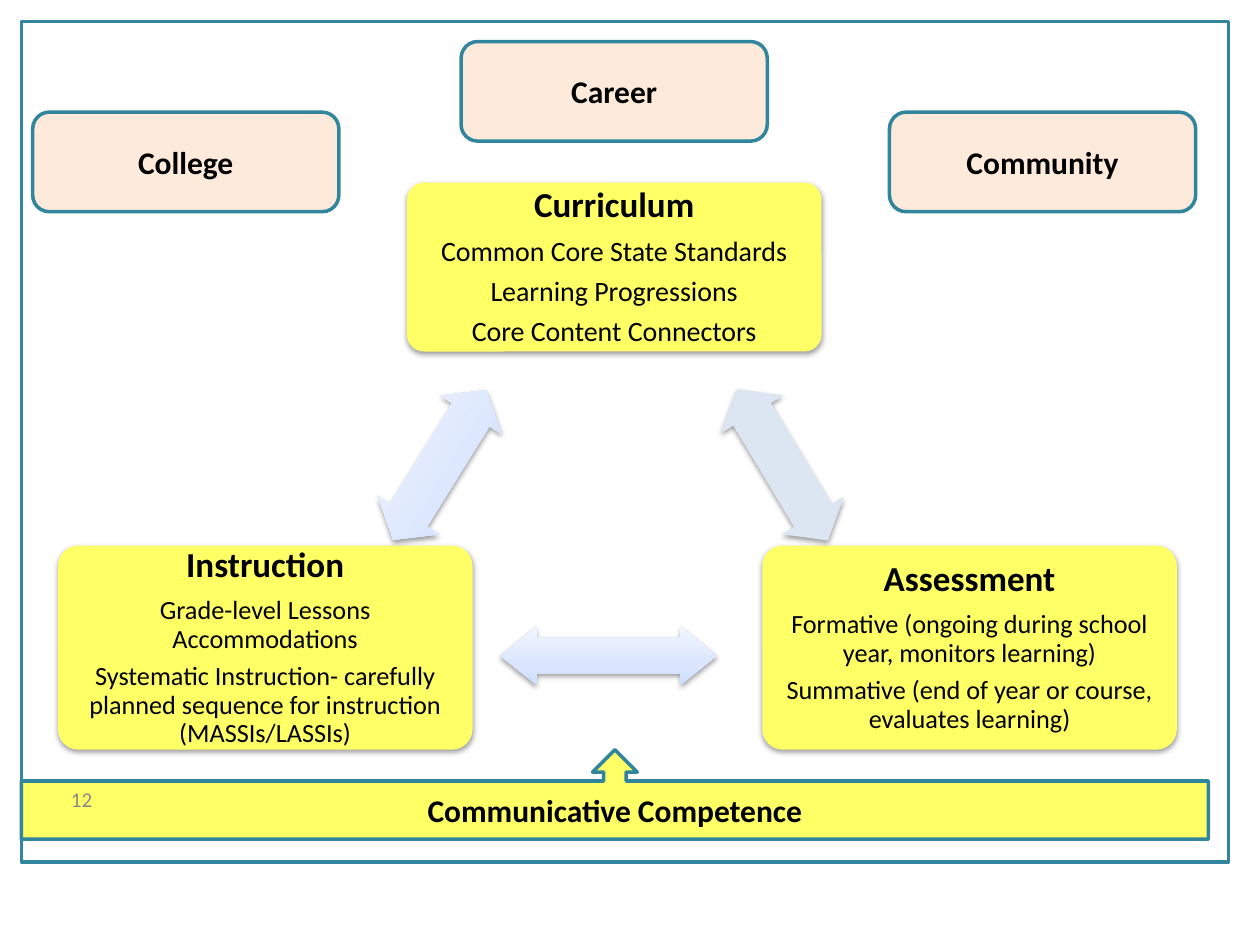
from copy import deepcopy

from lxml import etree
from pptx import Presentation
from pptx.dml.color import RGBColor
from pptx.enum import shapes, text
from pptx.oxml import ns
from pptx.util import Inches, Pt

KIND = shapes.MSO_SHAPE
ALIGN = text.PP_ALIGN
FONT = "Calibri"
COLORS = {
    "teal": "31859C", "peach": "FDEADA", "yellow": "FFFF66", "mist": "DCE6F2",
    "black": "000000", "gray": "898989",
}
FADE = [(0, "CDDDFF"), (0.35, "DBE6FE"), (1, "F1F5FF")]


def color(name):
    return RGBColor.from_string(COLORS[name])


def add_shape(slide, kind, box, fill=None, line=None):
    shape = slide.shapes.add_shape(kind, *map(Inches, box))
    shape.shadow.inherit = False
    if fill:
        shape.fill.solid()
        shape.fill.fore_color.rgb = color(fill)
    else:
        shape.fill.background()
    if line:
        shape.line.color.rgb = color(line)
        shape.line.width = Pt(2)
    else:
        shape.line.fill.background()
    return shape


def add_shadow(shape):
    """Drop a soft shadow straight below the shape."""
    effects = shape._element.spPr.find(ns.qn("a:effectLst"))
    outer = etree.SubElement(effects, ns.qn("a:outerShdw"), blurRad="40000",
                             dist="20000", dir="5400000", rotWithShape="0")
    tone = etree.SubElement(outer, ns.qn("a:srgbClr"), val=COLORS["black"])
    etree.SubElement(tone, ns.qn("a:alpha"), val="38000")


def add_fade(shape):
    """Fill with the three-stop blue gradient, darkest at the bottom."""
    shape.fill.gradient()
    shape.fill.gradient_angle = 90
    stops = shape._element.spPr.find(ns.qn("a:gradFill")).find(ns.qn("a:gsLst"))
    stops.insert(1, deepcopy(stops[0]))
    for stop, (place, tone) in zip(shape.fill.gradient_stops, FADE):
        stop.position = place
        stop.color.rgb = RGBColor.from_string(tone)


def add_run(para, words, size, bold=False, tone="black"):
    run = para.add_run()
    run.text = words
    run.font.name = FONT
    run.font.size = Pt(size)
    run.font.bold = bold
    run.font.color.rgb = color(tone)


def add_label(shape, words, size=18, bold=True, tone="black", align=ALIGN.CENTER):
    frame = shape.text_frame
    frame.word_wrap = True
    frame.vertical_anchor = text.MSO_ANCHOR.MIDDLE
    frame.paragraphs[0].alignment = align
    add_run(frame.paragraphs[0], words, size, bold, tone)


def add_goal(slide, left, top, words):
    box = (left, top, 2.43, 0.79)
    add_label(add_shape(slide, KIND.ROUNDED_RECTANGLE, box, "peach", "teal"), words)


def add_card(slide, left, top, high, title, size, points):
    box = (left, top, 3.29, high)
    card = add_shape(slide, KIND.ROUNDED_RECTANGLE, box, "yellow")
    card.adjustments[0] = 0.1
    add_shadow(card)
    frame = card.text_frame
    frame.margin_left = frame.margin_right = Inches(0.08)
    frame.margin_top = frame.margin_bottom = Inches(0.08)
    add_label(card, title, 20)
    for point in points:
        para = frame.add_paragraph()
        para.alignment = ALIGN.CENTER
        add_run(para, point, size)
    for para in frame.paragraphs:
        para.line_spacing = 0.9
        para.space_after = Pt(0.35 * para.runs[0].font.size.pt)


def add_arrow(slide, box, head, turn=0, fill=None):
    """Add a two-way arrow; without a fill colour it gets the gradient."""
    arrow = add_shape(slide, KIND.LEFT_RIGHT_ARROW, box, fill)
    arrow.adjustments[0] = 0.6
    arrow.adjustments[1] = head
    arrow.rotation = turn
    if not fill:
        add_fade(arrow)
    add_shadow(arrow)


def main():
    deck = Presentation()
    deck.slide_width, deck.slide_height = Inches(10), Inches(7.5)
    slide = deck.slides.add_slide(deck.slide_layouts[6])

    add_shape(slide, KIND.RECTANGLE, (0.17, 0.17, 9.58, 6.67), line="teal")
    add_goal(slide, 0.26, 0.89, "College")
    add_goal(slide, 3.66, 0.33, "Career")
    add_goal(slide, 7.06, 0.89, "Community")

    base = add_shape(slide, KIND.UP_ARROW_CALLOUT, (0.17, 5.95, 9.42, 0.71),
                     "yellow", "teal")
    add_label(base, "Communicative Competence")

    add_card(slide, 3.23, 1.45, 1.34, "Curriculum", 16, [
        "Common Core State Standards",
        "Learning Progressions",
        "Core Content Connectors",
    ])
    add_card(slide, 0.46, 4.33, 1.62, "Instruction", 15, [
        "Grade-level Lessons Accommodations",
        "Systematic Instruction- carefully planned sequence for instruction "
        "(MASSIs/LASSIs)",
    ])
    add_card(slide, 6.05, 4.33, 1.62, "Assessment", 15, [
        "Formative (ongoing during school year, monitors learning)",
        "Summative (end of year or course, evaluates learning)",
    ])

    add_arrow(slide, (3.97, 4.97, 1.72, 0.47), 0.62)
    add_arrow(slide, (5.51, 3.4, 1.4, 0.58), 0.4, 59, "mist")
    add_arrow(slide, (2.79, 3.4, 1.4, 0.58), 0.4, 301.9)

    number = slide.shapes.add_textbox(*map(Inches, (0, 6.14, 0.83, 0.4)))
    add_label(number, "12", 12, False, "gray", ALIGN.RIGHT)

    deck.save("out.pptx")


if __name__ == "__main__":
    main()
